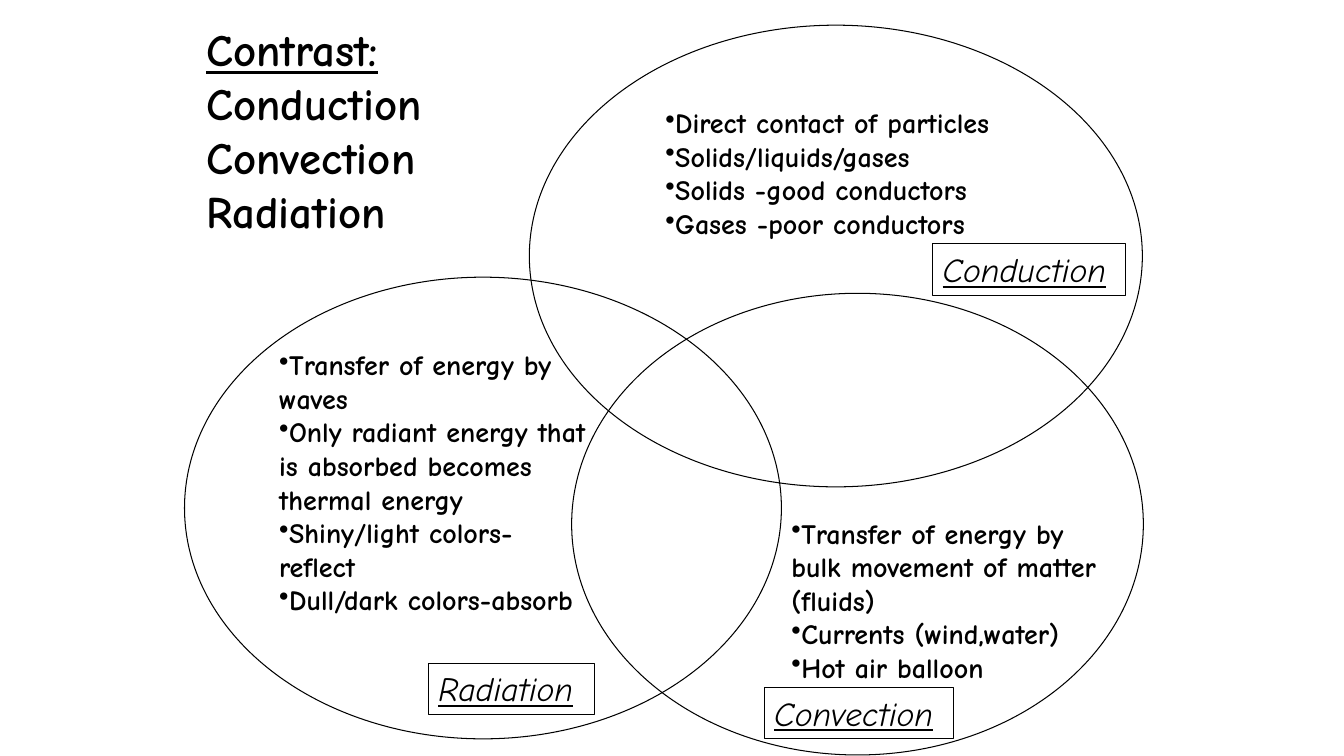
from lxml.etree import SubElement
from pptx import Presentation
from pptx.dml.color import RGBColor
from pptx.enum.shapes import MSO_SHAPE
from pptx.enum.text import MSO_ANCHOR, PP_ALIGN
from pptx.oxml.ns import qn
from pptx.util import Emu, Pt

PX = 9144  # 100 px to the inch
FONT = "Comic Neue"
BLACK = "000000"


def color(hex_string):
    return RGBColor.from_string(hex_string)


def write_lines(shape, lines, size, bold=False, italic=False, bulleted=False):
    frame = shape.text_frame
    frame.word_wrap = True
    frame.vertical_anchor = MSO_ANCHOR.TOP
    frame.text = "\n".join(lines)
    for paragraph in frame.paragraphs:
        paragraph.alignment = PP_ALIGN.LEFT
        font = paragraph.font
        font.name, font.size = FONT, Pt(size)
        font.bold, font.italic = bold, italic
        font.color.rgb = color(BLACK)
        if bulleted:
            properties = paragraph._p.get_or_add_pPr()
            properties.set("marL", "0")
            properties.set("indent", "0")
            bullet = SubElement(properties, qn("a:buChar"))
            bullet.set("char", "•")
            # Bullet settings come before the default run properties
            properties.insert(0, bullet)
    return frame.paragraphs


presentation = Presentation()
presentation.slide_width = Emu(1333 * PX)
presentation.slide_height = Emu(750 * PX)
slide = presentation.slides.add_slide(presentation.slide_layouts[6])

# Facts inside each circle
facts = [
    ((650, 100, 394, 143), [
        "Direct contact of particles",
        "Solids/liquids/gases",
        "Solids -good conductors",
        "Gases -poor conductors",
    ]),
    ((775, 507, 342, 177), [
        "Transfer of energy by bulk movement of matter (fluids)",
        "Currents (wind,water)",
        "Hot air balloon",
    ]),
    ((267, 340, 325, 343), [
        "Transfer of energy by waves",
        "Only radiant energy that is absorbed becomes thermal energy",
        "Shiny/light colors- reflect",
        "Dull/dark colors-absorb",
    ]),
]
for box, lines in facts:
    text_box = slide.shapes.add_textbox(*[Emu(n * PX) for n in box])
    write_lines(text_box, lines, 20, bold=True, bulleted=True)

# Venn circles, then their name labels
outlines = [
    (MSO_SHAPE.OVAL, (183, 275, 592, 458), None),
    (MSO_SHAPE.OVAL, (525, 25, 608, 458), None),
    (MSO_SHAPE.OVAL, (567, 291, 567, 458), None),
    (MSO_SHAPE.RECTANGLE, (425, 658, 165, 51), "Radiation"),
    (MSO_SHAPE.RECTANGLE, (925, 242, 191, 51), "Conduction"),
    (MSO_SHAPE.RECTANGLE, (758, 682, 188, 51), "Convection"),
]
for preset, box, label in outlines:
    shape = slide.shapes.add_shape(preset, *[Emu(n * PX) for n in box])
    shape.shadow.inherit = False
    shape.fill.background()
    shape.line.color.rgb = color(BLACK)
    shape.line.width = Pt(0.75)
    if label:
        paragraphs = write_lines(shape, [label], 24, italic=True)
        paragraphs[0].font.underline = True

# Heading with the three kinds of heat transfer
heading = slide.shapes.add_textbox(*[Emu(n * PX) for n in (195, 17, 247, 226)])
paragraphs = write_lines(
    heading, ["Contrast:", "Conduction", "Convection", "Radiation"], 32, bold=True)
paragraphs[0].font.underline = True

presentation.save("out.pptx")
